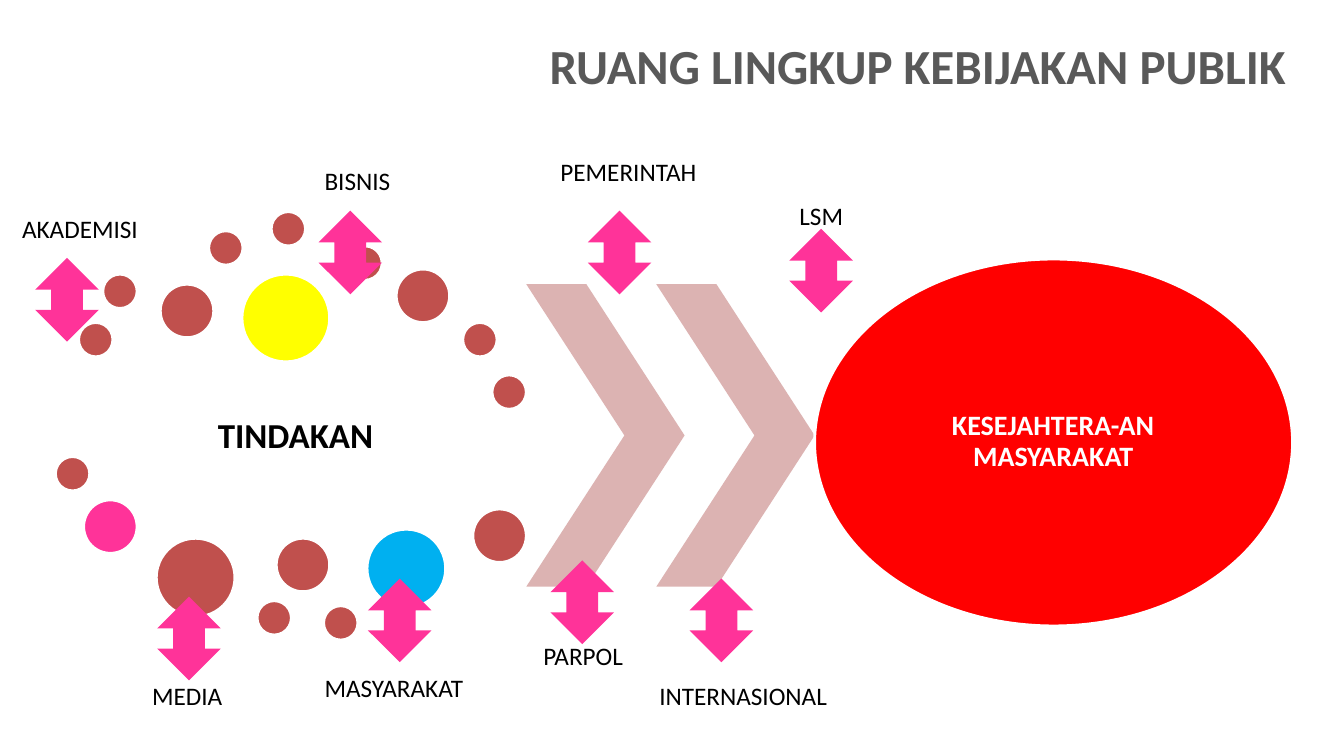
"""Build the slide on the scope of public policy on a grid of 0.1 inch cells."""
import dataclasses

import pptx
import pptx.dml.color
import pptx.enum.shapes
import pptx.enum.text
import pptx.util

COLORS = {
    "title": "595959", "black": "000000", "white": "FFFFFF",
    "brick": "C0504D", "rose": "DCB3B2", "yellow": "FFFF00",
    "pink": "FF3399", "blue": "00B0F0", "red": "FF0000",
}
CELL = 0.1
SMALL, MEDIUM, LARGE, HUGE = 3.4, 5.3, 7.8, 8.7
SHAPE = pptx.enum.shapes.MSO_SHAPE
ALIGN = pptx.enum.text.PP_ALIGN
ANCHOR = pptx.enum.text.MSO_ANCHOR
AUTO = pptx.enum.text.MSO_AUTO_SIZE


@dataclasses.dataclass(frozen=True)
class Box:
    col: float
    row: float
    cols: float
    rows: float


@dataclasses.dataclass(frozen=True)
class Dot:
    col: float
    row: float
    size: float = SMALL
    color: str = "brick"


@dataclasses.dataclass(frozen=True)
class Actor:
    name: str
    col: float
    row: float
    arrow_col: float
    arrow_row: float


@dataclasses.dataclass(frozen=True)
class Style:
    size: float
    color: str = "black"
    bold: bool = True
    align: ALIGN = ALIGN.CENTER
    anchor: ANCHOR = ANCHOR.MIDDLE
    inset: float | None = 0
    spacing: float | None = 0.9
    grow: bool = False


TITLE = Style(35, "title", align=ALIGN.RIGHT, anchor=ANCHOR.TOP, inset=None, spacing=None)
ACTION = Style(25, inset=0.3)
GOAL = Style(20, "white")
LABEL = Style(18, bold=False, align=ALIGN.LEFT, anchor=ANCHOR.TOP,
              inset=None, spacing=None, grow=True)

DOTS = [
    Dot(7.8, 32), Dot(10.2, 27.2), Dot(15.9, 28.2, MEDIUM), Dot(20.7, 22.9),
    Dot(26.9, 21), Dot(34.5, 24.4), Dot(39.3, 26.7, MEDIUM), Dot(45.9, 32),
    Dot(48.8, 37.2), Dot(24, 27.2, HUGE, "yellow"), Dot(5.5, 45.3),
    Dot(8.3, 49.6, MEDIUM, "pink"), Dot(15.5, 53.4, LARGE), Dot(25.5, 59.6),
    Dot(27.4, 53.4, MEDIUM), Dot(32.1, 60.1), Dot(36.4, 52.5, LARGE, "blue"),
    Dot(46.9, 50.5, MEDIUM),
]
ACTORS = [
    Actor("BISNIS", 31.2, 15.9, 31.6, 20.9),
    Actor("PEMERINTAH", 54.6, 15, 58.3, 20.9),
    Actor("AKADEMISI", 1.2, 20.7, 3.5, 25.6),
    Actor("LSM", 78.3, 19.4, 78.3, 22.7),
    Actor("INTERNASIONAL", 64.4, 67, 68.4, 57.4),
    Actor("PARPOL", 52.9, 63, 54.6, 55.6),
    Actor("MASYARAKAT", 31.2, 66.2, 36.5, 57.4),
    Actor("MEDIA", 14.1, 67, 15.6, 59.2),
]


def cells(n: float) -> pptx.util.Length:
    """Turn a number of grid cells into a length."""
    return pptx.util.Inches(n * CELL)


def rgb(name: str) -> pptx.dml.color.RGBColor:
    """Look up a named colour."""
    return pptx.dml.color.RGBColor.from_string(COLORS[name])


def place(box: Box) -> tuple:
    """Return left, top, width and height of a box."""
    return tuple(cells(n) for n in dataclasses.astuple(box))


def add_shape(s, kind: SHAPE, box: Box, color: str, outlined: bool = False):
    """Draw a filled preset shape, with a white outline if asked."""
    sp = s.shapes.add_shape(kind, *place(box))
    sp.shadow.inherit = False
    sp.fill.solid()
    sp.fill.fore_color.rgb = rgb(color)
    if outlined:
        sp.line.color.rgb = rgb("white")
        sp.line.width = pptx.util.Pt(2)
    else:
        sp.line.fill.background()
    return sp


def add_text(s, text: str, box: Box, style: Style) -> None:
    """Write one run of text in a wrapping box."""
    tf = s.shapes.add_textbox(*place(box)).text_frame
    tf.word_wrap = True
    tf.auto_size = AUTO.SHAPE_TO_FIT_TEXT if style.grow else AUTO.NONE
    tf.vertical_anchor = style.anchor
    if style.inset is not None:
        tf.margin_left = tf.margin_right = cells(style.inset)
        tf.margin_top = tf.margin_bottom = cells(style.inset)
    p = tf.paragraphs[0]
    p.alignment = style.align
    p.line_spacing = style.spacing
    r = p.add_run()
    r.text = text
    r.font.name = "Calibri"
    r.font.size = pptx.util.Pt(style.size)
    r.font.bold = style.bold
    r.font.color.rgb = rgb(style.color)


def main() -> None:
    """Draw the slide and save it."""
    prs = pptx.Presentation()
    prs.slide_width = pptx.util.Inches(13.33)
    prs.slide_height = pptx.util.Inches(7.5)
    s = prs.slides.add_slide(prs.slide_layouts[6])

    add_text(s, "RUANG LINGKUP KEBIJAKAN PUBLIK", Box(5, 3, 123.6, 12.5), TITLE)
    add_text(s, "TINDAKAN", Box(7.9, 36.3, 42.8, 14.1), ACTION)
    for dot in DOTS:
        add_shape(s, SHAPE.OVAL, Box(dot.col, dot.row, dot.size, dot.size), dot.color, True)
    for i in range(2):
        sp = add_shape(s, SHAPE.CHEVRON, Box(52.2 + 12.9 * i, 28.2, 15.7, 30), "rose")
        sp.adjustments[0] = 0.62
    add_shape(s, SHAPE.OVAL, Box(80.8, 25.7, 47.4, 36.4), "red", True)
    add_text(s, "KESEJAHTERA-AN MASYARAKAT", Box(87.7, 31, 33.5, 25.7), GOAL)
    for actor in ACTORS:
        add_text(s, actor.name, Box(actor.col, actor.row, 33.2, 4), LABEL)
        add_shape(s, SHAPE.UP_DOWN_ARROW,
                  Box(actor.arrow_col, actor.arrow_row, 6.3, 8.3), "pink")
    prs.save("out.pptx")


if __name__ == "__main__":
    main()
